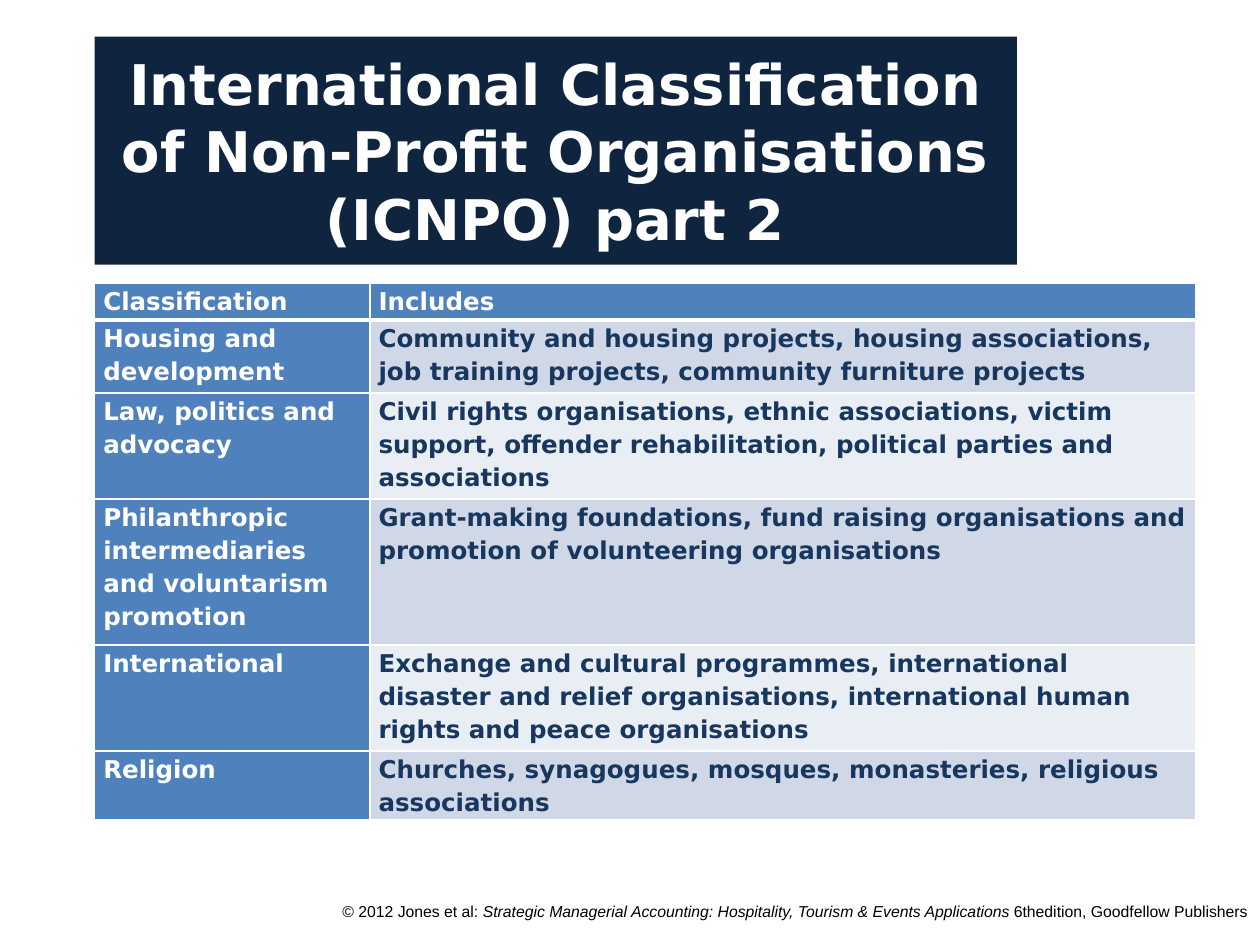
"""Build a slide with a table of non-profit organisation classes."""
import pptx
import pptx.util
import pptx.dml.color
import pptx.enum.shapes
import pptx.enum.text
import pptx.oxml
import pptx.oxml.ns

WIDE, HIGH = 10, 7.5
HUES = {"navy": "0F243E", "blue": "4F81BD", "ink": "17375E", "white": "FFFFFF",
        "black": "000000", "dark": "D0D8E8", "light": "E9EDF4"}
TITLE = "International Classification of Non-Profit Organisations (ICNPO) part 2"
CREDIT = [
    ("© 2012 Jones et al: ", False),
    ("Strategic Managerial Accounting: Hospitality, Tourism & Events Applications ", True),
    ("6thedition, Goodfellow Publishers", False),
]
ROWS = [
    (0.29, "Classification", "Includes"),
    (0.58, "Housing and development",
     "Community and housing projects, housing associations, job training projects, "
     "community furniture projects"),
    (0.84, "Law, politics and advocacy",
     "Civil rights organisations, ethnic associations, victim support, offender "
     "rehabilitation, political parties and associations"),
    (1.16, "Philanthropic intermediaries and voluntarism promotion",
     "Grant-making foundations, fund raising organisations and promotion of "
     "volunteering organisations"),
    (0.84, "International",
     "Exchange and cultural programmes, international disaster and relief "
     "organisations, international human rights and peace organisations"),
    (0.55, "Religion",
     "Churches, synagogues, mosques, monasteries, religious associations"),
]
SHARES = (0.25, 0.75)
LEFT = 0.075 * WIDE
SPAN = 0.874 * WIDE

Inch = pptx.util.Inches
Align = pptx.enum.text.PP_ALIGN
Anchor = pptx.enum.text.MSO_ANCHOR


def tint(name):
    return pptx.dml.color.RGBColor.from_string(HUES[name])


def paint(item, name):
    item.fill.solid()
    item.fill.fore_color.rgb = tint(name)


def write(para, text, size, face, hue, bold=False, slant=False):
    run = para.add_run()
    run.text = text
    font = run.font
    font.size, font.name = pptx.util.Pt(size), face
    font.bold, font.italic = bold, slant
    font.color.rgb = tint(hue)


def edge(cell, low):
    props = cell._tc.get_or_add_tcPr()
    for spot, (side, width) in enumerate(zip("LRTB", (1, 1, 1, low))):
        props.insert(spot, pptx.oxml.parse_xml(
            f'<a:ln{side} {pptx.oxml.ns.nsdecls("a")} w="{pptx.util.Pt(width)}">'
            f'<a:solidFill><a:srgbClr val="{HUES["white"]}"/></a:solidFill></a:ln{side}>'))


def add_title(slide):
    rect = pptx.enum.shapes.MSO_SHAPE.RECTANGLE
    box = slide.shapes.add_shape(
        rect, Inch(LEFT), Inch(0.29), Inch(0.732 * WIDE), Inch(1.81))
    box.shadow.inherit = False
    paint(box, "navy")
    box.line.fill.background()
    frame = box.text_frame
    frame.word_wrap = True
    frame.vertical_anchor = Anchor.MIDDLE
    para = frame.paragraphs[0]
    para.alignment = Align.CENTER
    write(para, TITLE, 32, "DejaVu Sans", "white", True)


def add_grid(slide):
    high = sum(row[0] for row in ROWS)
    grid = slide.shapes.add_table(
        len(ROWS), len(SHARES), Inch(LEFT), Inch(0.3 * HIGH), Inch(SPAN), Inch(high)).table
    for col, share in zip(grid.columns, SHARES):
        col.width = Inch(SPAN * share)
    for r, (tall, *texts) in enumerate(ROWS):
        grid.rows[r].height = Inch(tall)
        for c, text in enumerate(texts):
            cell = grid.cell(r, c)
            head = r == 0 or c == 0
            paint(cell, "blue" if head else "dark" if r % 2 else "light")
            edge(cell, 3 if r == 0 else 1)
            cell.margin_left = cell.margin_right = Inch(0.07)
            cell.margin_top = cell.margin_bottom = 0
            para = cell.text_frame.paragraphs[0]
            para.line_spacing = 1.15
            write(para, text, 14, "DejaVu Sans", "white" if head else "ink", True)


def add_credit(slide):
    wide, high = 0.777 * WIDE, 0.052 * HIGH
    box = slide.shapes.add_textbox(
        Inch(WIDE - wide), Inch(HIGH - high), Inch(wide), Inch(high))
    box.text_frame.word_wrap = True
    para = box.text_frame.paragraphs[0]
    para.alignment = Align.RIGHT
    for text, slant in CREDIT:
        write(para, text, 9, "Arial", "black", slant=slant)


def main():
    deck = pptx.Presentation()
    deck.slide_width, deck.slide_height = Inch(WIDE), Inch(HIGH)
    slide = deck.slides.add_slide(deck.slide_layouts[6])
    add_credit(slide)
    add_title(slide)
    add_grid(slide)
    deck.save("out.pptx")


if __name__ == "__main__":
    main()
